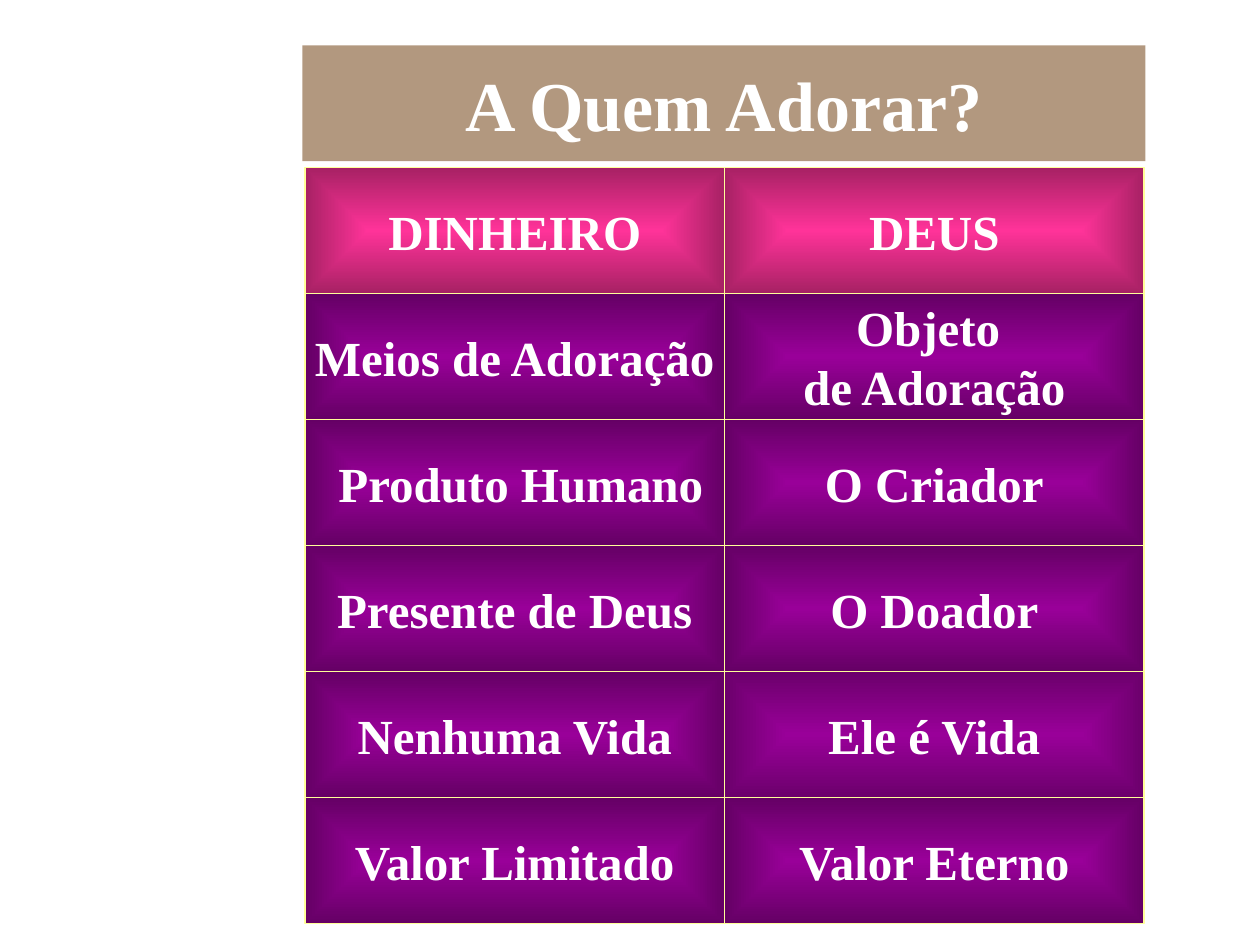
from lxml.etree import SubElement
from pptx import Presentation
from pptx.dml.color import RGBColor
from pptx.enum.shapes import MSO_SHAPE
from pptx.enum.text import MSO_ANCHOR, PP_ALIGN
from pptx.oxml import parse_xml
from pptx.oxml.ns import nsdecls, qn
from pptx.util import Inches, Pt

COLORS = {
    "text": "FFFFFF",
    "title": "663300",
    "border": "FFFF99",
    "header": "FF3399",
    "body": "990099",
}
LEFT, TOP = 2.42, 1.33
CELL_W, CELL_H = 3.33, 1
HEADER_SHADE, BODY_SHADE, LIFE_SHADE = 38000, 39216, 45000

ROWS = [
    ("DINHEIRO", "DEUS"),
    ("Meios de Adoração", "Objeto \nde Adoração"),
    (" Produto Humano", "O Criador"),
    ("Presente de Deus", "O Doador"),
    ("Nenhuma Vida", "Ele é Vida"),
    ("Valor Limitado", "Valor Eterno"),
]


def color(name):
    return RGBColor.from_string(COLORS[name])


def write_text(sp, text, size, wrap):
    tf = sp.text_frame
    tf.word_wrap = wrap
    tf.vertical_anchor = MSO_ANCHOR.MIDDLE
    tf.text = text
    font_format = {"name": "Times New Roman", "size": Pt(size), "bold": True}
    for p in tf.paragraphs:
        p.alignment = PP_ALIGN.CENTER
        for r in p.runs:
            for key, value in font_format.items():
                setattr(r.font, key, value)
            r.font.color.rgb = color("text")


def add_box(slide, left, top, width, height):
    sp = slide.shapes.add_shape(
        MSO_SHAPE.RECTANGLE, Inches(left), Inches(top), Inches(width), Inches(height)
    )
    sp.shadow.inherit = False
    return sp


def fill_from_center(sp, name, shade):
    """Fill with a rectangular gradient that darkens towards the edges."""
    hex_color = COLORS[name]
    gradient = parse_xml(
        f'<a:gradFill {nsdecls("a")} rotWithShape="1"><a:gsLst>'
        f'<a:gs pos="0"><a:srgbClr val="{hex_color}"/></a:gs>'
        f'<a:gs pos="100000"><a:srgbClr val="{hex_color}">'
        f'<a:shade val="{shade}"/></a:srgbClr></a:gs></a:gsLst>'
        '<a:path path="shape">'
        '<a:fillToRect l="50000" t="50000" r="50000" b="50000"/>'
        "</a:path></a:gradFill>"
    )
    sp._element.spPr.find(qn("a:prstGeom")).addnext(gradient)


def add_title(slide, text):
    sp = add_box(slide, 2.4, 0.36, 6.69, 0.92)
    sp.fill.solid()
    sp.fill.fore_color.rgb = color("title")
    fill_color = sp._element.spPr.find(".//" + qn("a:srgbClr"))
    SubElement(fill_color, qn("a:alpha"), val="50000")
    sp.line.fill.background()
    write_text(sp, text, 40, True)


def add_cell(slide, row, col, text):
    sp = add_box(slide, LEFT + col * CELL_W, TOP + row * CELL_H, CELL_W, CELL_H)
    if row == 0:
        fill_from_center(sp, "header", HEADER_SHADE)
    else:
        shade = LIFE_SHADE if text == "Ele é Vida" else BODY_SHADE
        fill_from_center(sp, "body", shade)
    sp.line.color.rgb = color("border")
    sp.line.width = Pt(0.75)
    write_text(sp, text, 28, False)


def main():
    prs = Presentation()
    prs.slide_width, prs.slide_height = Inches(10), Inches(7.5)
    slide = prs.slides.add_slide(prs.slide_layouts[6])
    add_title(slide, "A Quem Adorar?")
    for row, texts in enumerate(ROWS):
        for col, text in enumerate(texts):
            add_cell(slide, row, col, text)
    prs.save("out.pptx")


if __name__ == "__main__":
    main()
